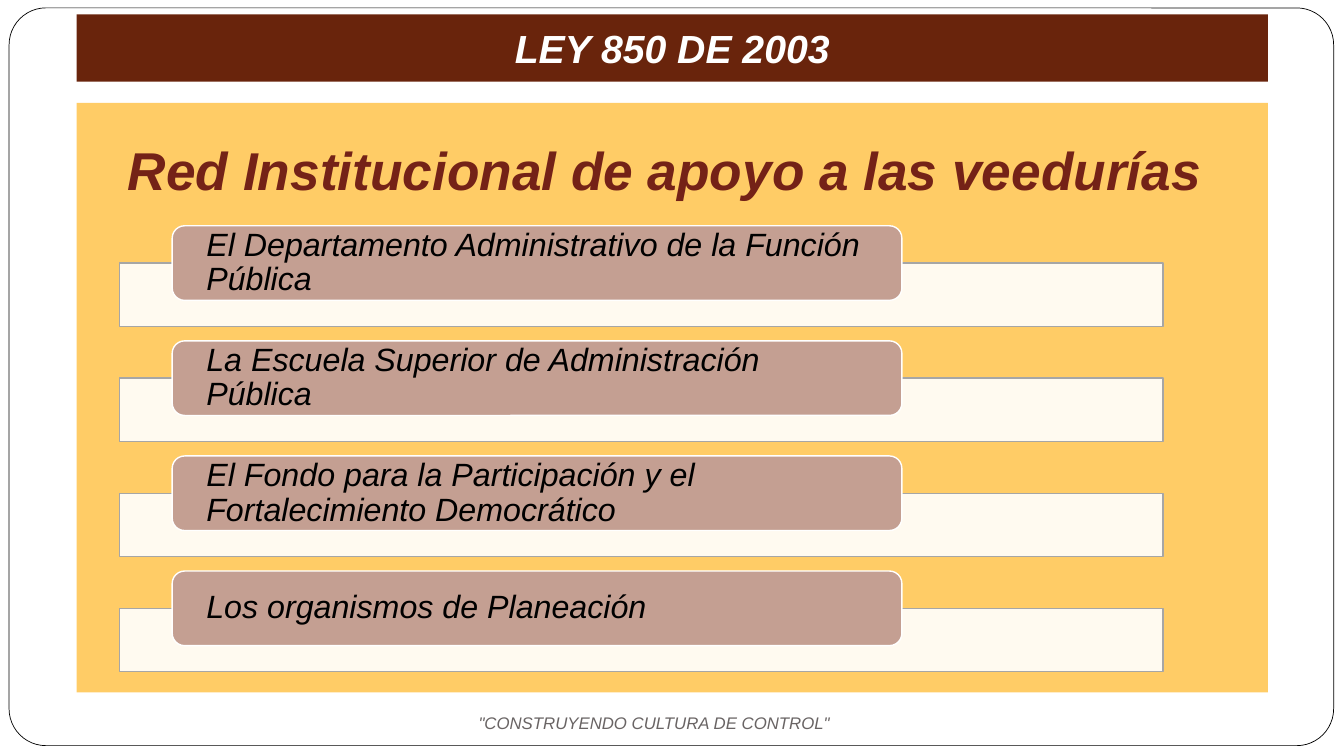
"""Build the slide on the institutional support network for citizen oversight."""
from dataclasses import dataclass

from lxml import etree
from pptx import Presentation
from pptx.dml.color import RGBColor
from pptx.enum.shapes import MSO_SHAPE
from pptx.enum.text import MSO_ANCHOR, MSO_AUTO_SIZE, PP_ALIGN
from pptx.oxml.ns import qn
from pptx.shapes.autoshape import Shape
from pptx.slide import Slide
from pptx.text.text import TextFrame
from pptx.util import Cm, Pt

RECTANGLE = MSO_SHAPE.RECTANGLE
ROUNDED = MSO_SHAPE.ROUNDED_RECTANGLE
TOP, MIDDLE, BOTTOM = MSO_ANCHOR.TOP, MSO_ANCHOR.MIDDLE, MSO_ANCHOR.BOTTOM
LEFT, CENTER, JUSTIFY = PP_ALIGN.LEFT, PP_ALIGN.CENTER, PP_ALIGN.JUSTIFY
NO_AUTOFIT = MSO_AUTO_SIZE.NONE


@dataclass(frozen=True)
class Theme:
    """Colours, font and type sizes of the slide."""

    font: str = "Arial"
    white: str = "FFFFFF"
    black: str = "000000"
    banner: str = "69240C"
    panel: str = "FFCC66"
    heading: str = "742217"
    entity: str = "C49F92"
    bar_edge: str = "A6A6A6"
    motto: str = "696464"
    title_size: float = 28
    heading_size: float = 38
    entity_size: float = 23
    motto_size: float = 12


@dataclass(frozen=True)
class Box:
    """Position and size in centimetres."""

    left: float
    top: float
    width: float
    height: float

    def lengths(self) -> tuple[Cm, Cm, Cm, Cm]:
        """Return the box as lengths."""
        return Cm(self.left), Cm(self.top), Cm(self.width), Cm(self.height)


@dataclass(frozen=True)
class Outline:
    """Colour and width in points of a shape's edge."""

    color: str
    width: float


@dataclass(frozen=True)
class Lettering:
    """Look of a single paragraph of italic text."""

    size: float
    color: str
    bold: bool = False
    align: PP_ALIGN = LEFT
    anchor: MSO_ANCHOR = MIDDLE
    line_spacing: float = 1.0


THEME = Theme()
TITLE = Lettering(THEME.title_size, THEME.white, True, CENTER, BOTTOM)
HEADING = Lettering(THEME.heading_size, THEME.heading, True, JUSTIFY, TOP)
ENTITY = Lettering(THEME.entity_size, THEME.black, line_spacing=0.9)
MOTTO = Lettering(THEME.motto_size, THEME.motto)

FIRST_ROW, ROW_PITCH = 5.69, 2.9
BAR_DROP = 0.94
ENTITIES = (
    "El Departamento Administrativo de la Función Pública",
    "La Escuela Superior de Administración Pública",
    "El Fondo para la Participación y el Fortalecimiento Democrático",
    "Los organismos de Planeación",
)


def write(frame: TextFrame, text: str, look: Lettering) -> None:
    """Write one formatted paragraph into a text frame."""
    frame.word_wrap = True
    frame.auto_size = NO_AUTOFIT
    frame.vertical_anchor = look.anchor
    paragraph = frame.paragraphs[0]
    paragraph.alignment = look.align
    paragraph.line_spacing = look.line_spacing
    paragraph.space_before = Pt(0)
    run = paragraph.add_run()
    run.text = text
    run.font.name = THEME.font
    run.font.size = Pt(look.size)
    run.font.bold = look.bold
    run.font.italic = True
    run.font.color.rgb = RGBColor.from_string(look.color)


def paint(shape: Shape, color: str) -> None:
    """Give a shape a solid fill."""
    shape.fill.solid()
    shape.fill.fore_color.rgb = RGBColor.from_string(color)


def place(shape: Shape, box: Box) -> None:
    """Move and resize a shape."""
    shape.left, shape.top, shape.width, shape.height = box.lengths()


def add_block(slide: Slide, kind: MSO_SHAPE, box: Box, color: str, outline: Outline) -> Shape:
    """Add a filled and outlined shape without shadow."""
    block = slide.shapes.add_shape(kind, *box.lengths())
    block.shadow.inherit = False
    paint(block, color)
    block.line.color.rgb = RGBColor.from_string(outline.color)
    block.line.width = Pt(outline.width)
    return block


def set_opacity(shape: Shape, percent: int) -> None:
    """Make a solid fill partly transparent."""
    color = shape.element.spPr.find(qn("a:solidFill"))[0]
    etree.SubElement(color, qn("a:alpha"), val=str(percent * 1000))


def add_frame_and_placeholders(slide: Slide) -> None:
    """Add the page frame, the law's title and the heading panel."""
    title, panel = slide.shapes.title, slide.placeholders[1]
    page_frame = add_block(slide, ROUNDED, Box(0.23, 0.2, 33.38, 18.59),
                           THEME.white, Outline(THEME.black, 0.5))
    page_frame.adjustments[0] = 0.05
    title.element.addprevious(page_frame.element)

    place(title, Box(1.93, 0.36, 30.02, 1.7))
    paint(title, THEME.banner)
    title.text_frame.margin_bottom = Cm(0.25)
    write(title.text_frame, "LEY 850 DE 2003", TITLE)

    place(panel, Box(1.93, 2.59, 30.02, 14.86))
    paint(panel, THEME.panel)
    panel.text_frame.margin_top = Cm(0.88)
    write(panel.text_frame, "Red Institucional de apoyo a las veedurías", HEADING)
    properties = panel.text_frame.paragraphs[0]._p.get_or_add_pPr()
    properties.set("marL", str(Cm(1.04)))
    properties.set("indent", "0")
    etree.SubElement(properties, qn("a:buNone"))


def add_entity(slide: Slide, name: str, top: float) -> None:
    """Add one supporting entity over its translucent bar."""
    bar = add_block(slide, RECTANGLE, Box(3.02, top + BAR_DROP, 26.29, 1.6),
                    THEME.white, Outline(THEME.bar_edge, 1))
    set_opacity(bar, 90)
    label = add_block(slide, ROUNDED, Box(4.34, top, 18.39, 1.88),
                      THEME.entity, Outline(THEME.white, 1))
    frame = label.text_frame
    frame.margin_left = frame.margin_right = Cm(0.77)
    frame.margin_top = frame.margin_bottom = Cm(0)
    write(frame, name, ENTITY)


def main() -> None:
    """Build and save the presentation."""
    deck = Presentation()
    deck.slide_width, deck.slide_height = Cm(33.87), Cm(19.05)
    slide = deck.slides.add_slide(deck.slide_layouts[1])
    add_frame_and_placeholders(slide)
    for row, name in enumerate(ENTITIES):
        add_entity(slide, name, FIRST_ROW + row * ROW_PITCH)
    motto = slide.shapes.add_textbox(*Box(11.81, 17.75, 10.13, 0.94).lengths())
    write(motto.text_frame, '"CONSTRUYENDO CULTURA DE CONTROL"', MOTTO)
    deck.save("out.pptx")


if __name__ == "__main__":
    main()
